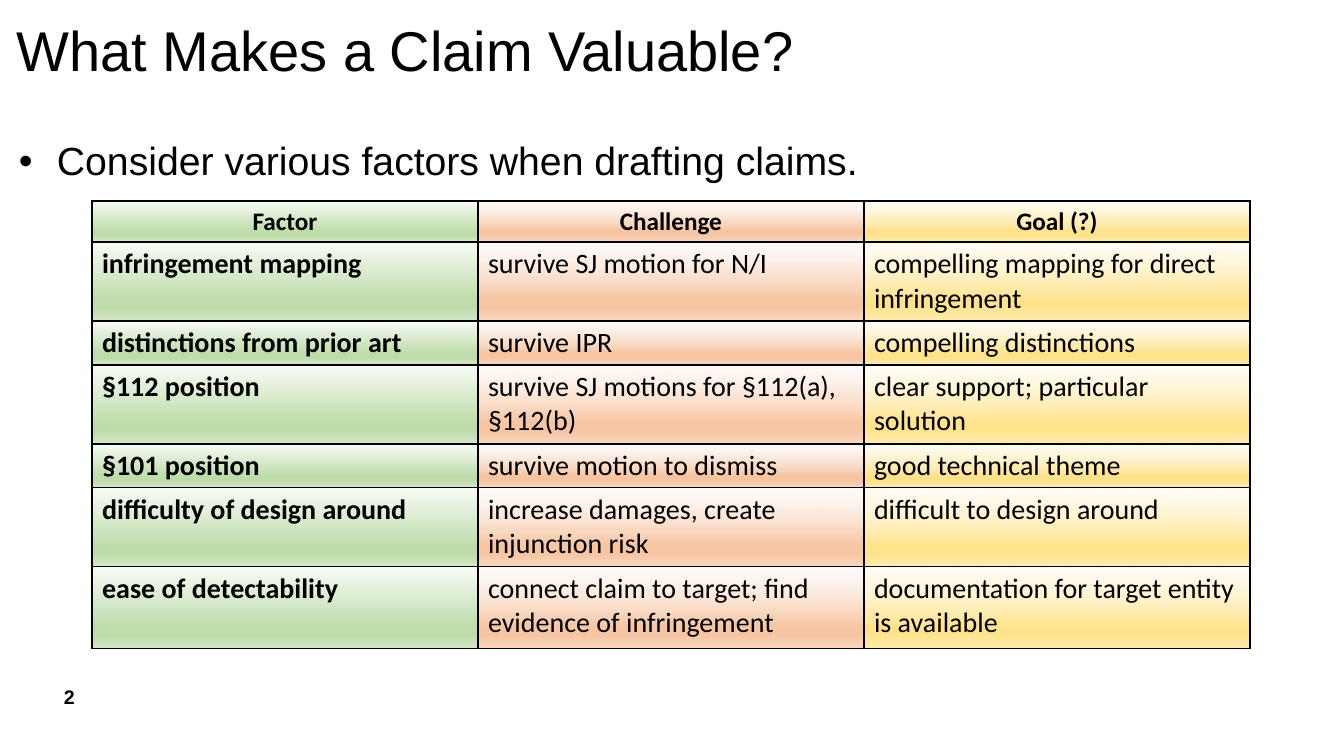
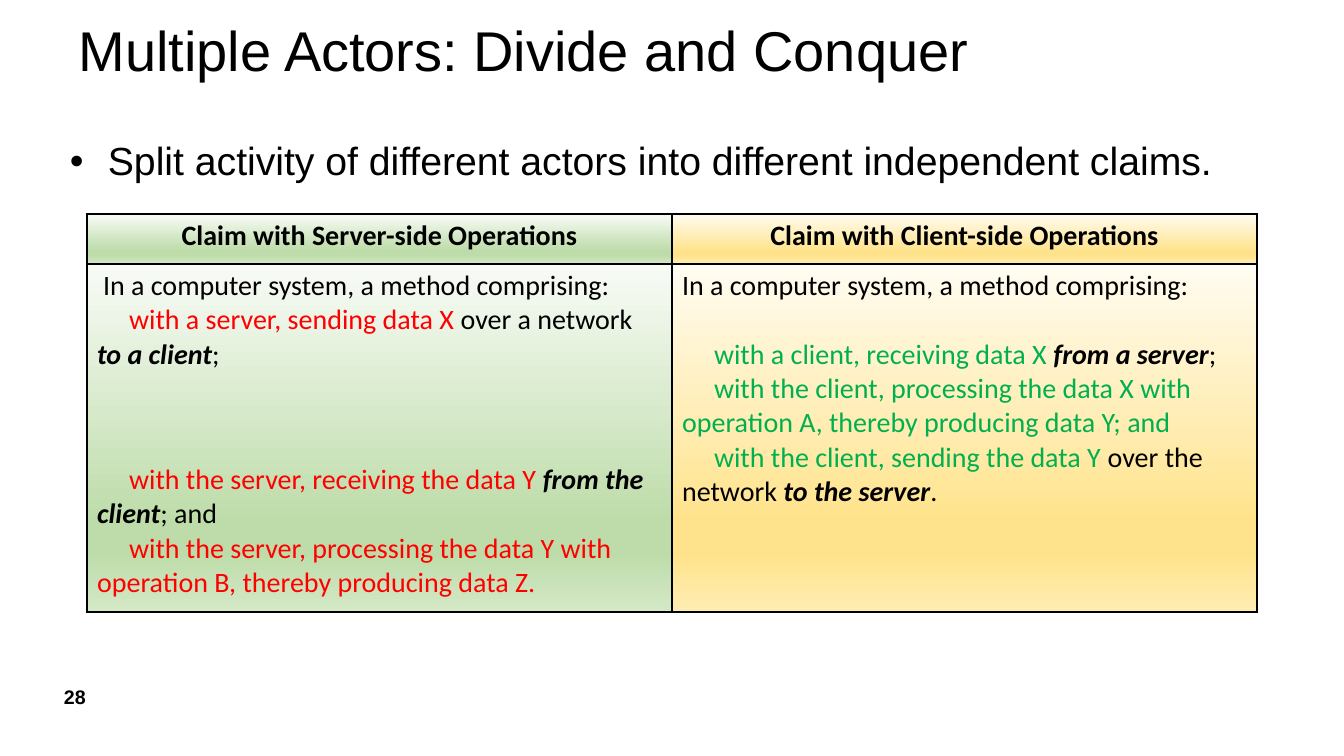
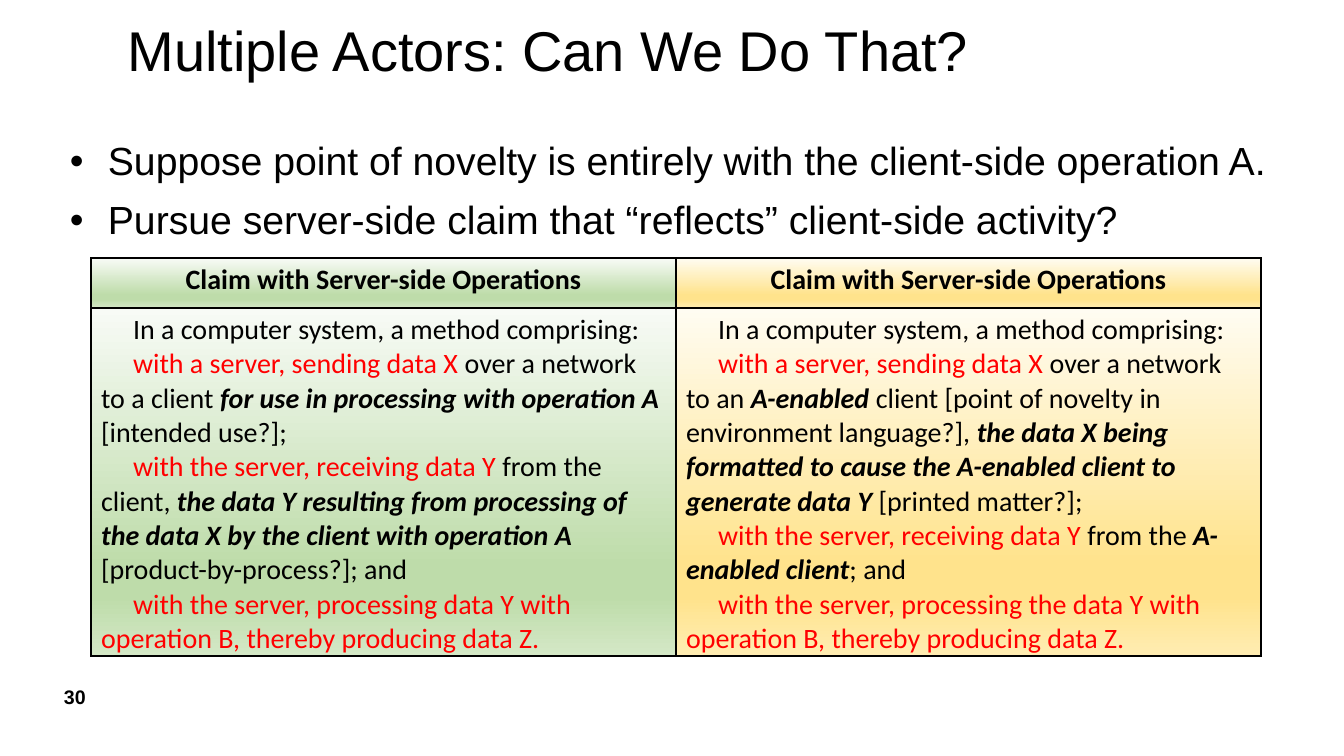
import pptx
import pptx.dml.color
import pptx.enum.text
import pptx.oxml.ns
import pptx.util
from lxml import etree

RGBColor = pptx.dml.color.RGBColor
ALIGN = pptx.enum.text.PP_ALIGN
ANCHOR = pptx.enum.text.MSO_ANCHOR
qn = pptx.oxml.ns.qn

PX_PER_INCH = 100.8
SLIDE_WIDTH, SLIDE_HEIGHT = 1344, 756
BLACK = RGBColor(0x00, 0x00, 0x00)
RED = RGBColor(0xFF, 0x00, 0x00)
GREEN = RGBColor(0x00, 0xB0, 0x50)
HEADING_FONT, TABLE_FONT = "Arial", "Calibri"

# Gradient colours at the stops below, and the opacity of the first stop
STOPS = (0, 74, 83, 100)
LEAF = ((RGBColor(0xF8, 0xFB, 0xF6), RGBColor(0xBE, 0xDC, 0xAA),
         RGBColor(0xBE, 0xDC, 0xAA), RGBColor(0xD4, 0xE8, 0xC6)), 100)
PEACH = ((RGBColor(0xFE, 0xF8, 0xF5), RGBColor(0xF7, 0xC5, 0xA2),
          RGBColor(0xF7, 0xC5, 0xA2), RGBColor(0xFA, 0xD8, 0xC1)), 43)
GOLD_COLOURS = (RGBColor(0xFF, 0xFC, 0xF2), RGBColor(0xFF, 0xE3, 0x8C),
                RGBColor(0xFF, 0xE3, 0x8C), RGBColor(0xFF, 0xEC, 0xB2))
GOLD, PALE_GOLD = (GOLD_COLOURS, 100), (GOLD_COLOURS, 52)

# Run styles
PLAIN = {}
STRONG = {"bold": True}
SERVER = {"color": RED}
CLIENT = {"color": GREEN}
POINT = {"bold": True, "italic": True}

STEP_INDENT = 32
LINE_GAP = 24.4  # points, height of one table line


def claim_line(*runs, indent=STEP_INDENT, before=0):
    return {"runs": runs, "indent": indent, "before": before}


FACTORS = [
    ("Factor", "Challenge", "Goal (?)"),
    ("infringement mapping", "survive SJ motion for N/I",
     "compelling mapping for direct infringement"),
    ("distinctions from prior art", "survive IPR", "compelling distinctions"),
    ("§112 position", "survive SJ motions for §112(a), §112(b)",
     "clear support; particular solution"),
    ("§101 position", "survive motion to dismiss", "good technical theme"),
    ("difficulty of design around", "increase damages, create injunction risk",
     "difficult to design around"),
    ("ease of detectability",
     "connect claim to target; find evidence of infringement",
     "documentation for target entity is available"),
]

PREAMBLE = ("In a computer system, a method comprising:", PLAIN)
SERVER_SENDS = ("with a server, sending data X", SERVER)

SPLIT_CLAIMS = [
    ("Claim with Server-side Operations", [
        claim_line(PREAMBLE, indent=6),
        claim_line(SERVER_SENDS, (" over a network ", PLAIN),
                   ("to a client", POINT), (";", PLAIN)),
        claim_line(("with the server, receiving the data Y ", SERVER),
                   ("from the client", POINT), ("; and", PLAIN), before=65),
        claim_line(("with the server, processing the data Y with operation B, "
                    "thereby producing data Z.", SERVER)),
    ]),
    ("Claim with Client-side Operations", [
        claim_line(PREAMBLE, indent=0),
        claim_line(("with a client, receiving data X ", CLIENT),
                   ("from a server", POINT), (";", PLAIN), before=LINE_GAP),
        claim_line(("with the client, processing the data X with operation A, "
                    "thereby producing data Y; and", CLIENT)),
        claim_line(("with the client, sending the data Y", CLIENT),
                   (" over the network ", PLAIN), ("to the server", POINT),
                   (".", PLAIN)),
    ]),
]

REFLECTING_CLAIMS = [
    ("Claim with Server-side Operations", [
        claim_line(PREAMBLE),
        claim_line(SERVER_SENDS, (" over a network to a client ", PLAIN),
                   ("for use in processing with operation A", POINT),
                   (" [intended use?];", PLAIN)),
        claim_line(("with the server, receiving data Y ", SERVER),
                   ("from the client, ", PLAIN),
                   ("the data Y resulting from processing of the data X "
                    "by the client with operation A ", POINT),
                   ("[product-by-process?]; and", PLAIN)),
        claim_line(("with the server, processing data Y with operation B, "
                    "thereby producing data Z.", SERVER)),
    ]),
    ("Claim with Server-side Operations", [
        claim_line(PREAMBLE),
        claim_line(SERVER_SENDS, (" over a network to an ", PLAIN),
                   ("A-enabled ", POINT),
                   ("client [point of novelty in environment language?], ", PLAIN),
                   ("the data X being formatted to cause the A-enabled client "
                    "to generate data Y", POINT),
                   (" [printed matter?];", PLAIN)),
        claim_line(("with the server, receiving data Y", SERVER),
                   (" from the ", PLAIN), ("A-enabled client", POINT),
                   ("; and", PLAIN)),
        claim_line(("with the server, processing the data Y with operation B, "
                    "thereby producing data Z.", SERVER)),
    ]),
]


def px(length):
    return pptx.util.Emu(round(length * 914400 / PX_PER_INCH))


def add_xml(parent, tag, **attributes):
    element = etree.SubElement(parent, qn(tag))
    for name, value in attributes.items():
        element.set(name, str(value))
    return element


def add_text(paragraph, text, font=TABLE_FONT, size=20, color=BLACK,
             bold=False, italic=False):
    run = paragraph.add_run()
    run.text = text
    run.font.name = font
    run.font.size = pptx.util.Pt(size)
    run.font.color.rgb = color
    run.font.bold = bold
    run.font.italic = italic


def next_paragraph(frame, index):
    return frame.paragraphs[0] if index == 0 else frame.add_paragraph()


def add_box(slide, left, top, width, height, anchor=ANCHOR.TOP):
    box = slide.shapes.add_textbox(px(left), px(top), px(width), px(height))
    box.text_frame.word_wrap = True
    box.text_frame.vertical_anchor = anchor
    return box.text_frame


def add_slide(presentation, number, title, title_width, bullets,
              bullets_width, bullet_indent, space_after=0):
    """Add a slide with its title, bullets and slide number."""
    slide = presentation.slides.add_slide(presentation.slide_layouts[6])

    paragraph = add_box(slide, 54, 677, 128, 40, ANCHOR.MIDDLE).paragraphs[0]
    paragraph.space_after = pptx.util.Pt(6)
    add_text(paragraph, number, font=HEADING_FONT, size=14, bold=True)

    paragraph = add_box(slide, -7, 0, title_width, 107, ANCHOR.MIDDLE).paragraphs[0]
    paragraph.alignment = ALIGN.RIGHT
    paragraph.line_spacing = 0.9
    add_text(paragraph, title, font=HEADING_FONT, size=40)

    frame = add_box(slide, 9, 137, bullets_width, 54 + 59 * (len(bullets) - 1))
    for index, text in enumerate(bullets):
        paragraph = next_paragraph(frame, index)
        properties = paragraph._p.get_or_add_pPr()
        properties.set("marL", str(px(bullet_indent)))
        properties.set("indent", str(px(-38)))
        add_xml(properties, "a:buFont", typeface=HEADING_FONT)
        add_xml(properties, "a:buChar", char="•")
        paragraph.line_spacing = 0.9
        paragraph.space_after = pptx.util.Pt(space_after)
        add_text(paragraph, text, font=HEADING_FONT, size=28)
    return slide


def style_cell(cell, gradient):
    """Give the cell thin black borders and a vertical gradient."""
    properties = cell._tc.get_or_add_tcPr()
    for side in ("a:lnL", "a:lnR", "a:lnT", "a:lnB"):
        line = add_xml(properties, side, w=pptx.util.Pt(1))
        add_xml(add_xml(line, "a:solidFill"), "a:srgbClr", val=BLACK)
    colours, first_opacity = gradient
    fill = add_xml(properties, "a:gradFill", rotWithShape=1)
    stops = add_xml(fill, "a:gsLst")
    for position, colour in zip(STOPS, colours):
        stop = add_xml(stops, "a:gs", pos=position * 1000)
        color = add_xml(stop, "a:srgbClr", val=colour)
        if position == 0 and first_opacity < 100:
            add_xml(color, "a:alpha", val=first_opacity * 1000)
    add_xml(fill, "a:lin", ang=90 * 60000, scaled=0)


def add_grid(slide, left, top, column_width, row_heights, gradients):
    """Add a table with one gradient per column."""
    table = slide.shapes.add_table(
        len(row_heights), len(gradients), px(left), px(top),
        px(column_width * len(gradients)), px(sum(row_heights))).table
    table.first_row = table.horz_banding = False
    for row, height in zip(table.rows, row_heights):
        row.height = px(height)
        for cell, gradient in zip(row.cells, gradients):
            style_cell(cell, gradient)
    for column in table.columns:
        column.width = px(column_width)
    return table


def add_header(cell, text, size):
    paragraph = cell.text_frame.paragraphs[0]
    paragraph.alignment = ALIGN.CENTER
    add_text(paragraph, text, size=size, bold=True)


def add_factor_table(slide):
    table = add_grid(slide, 92, 201, 386, (41, 79, 44, 79, 44, 79, 82),
                     (LEAF, PEACH, PALE_GOLD))
    for row_index, texts in enumerate(FACTORS):
        for column_index, text in enumerate(texts):
            cell = table.cell(row_index, column_index)
            if row_index == 0:
                add_header(cell, text, 18)
            else:
                style = STRONG if column_index == 0 else PLAIN
                add_text(cell.text_frame.paragraphs[0], text, **style)


def add_claim_table(slide, left, top, claims):
    table = add_grid(slide, left, top, 585, (50, 348), (LEAF, GOLD))
    for column_index, (header, lines) in enumerate(claims):
        add_header(table.cell(0, column_index), header, 20)
        cell = table.cell(1, column_index)
        cell.margin_bottom = 0
        for index, line in enumerate(lines):
            paragraph = next_paragraph(cell.text_frame, index)
            properties = paragraph._p.get_or_add_pPr()
            properties.set("marL", "0")
            properties.set("indent", str(px(line["indent"])))
            if line["before"]:
                paragraph.space_before = pptx.util.Pt(line["before"])
            for text, style in line["runs"]:
                add_text(paragraph, text, **style)


def main():
    presentation = pptx.Presentation()
    presentation.slide_width = px(SLIDE_WIDTH)
    presentation.slide_height = px(SLIDE_HEIGHT)

    slide = add_slide(presentation, "2", "What Makes a Claim Valuable?", 810,
                      ["Consider various factors when drafting claims."], 964, 38)
    add_factor_table(slide)

    slide = add_slide(
        presentation, "28", "Multiple Actors: Divide and Conquer", 985,
        ["Split activity of different actors into different independent claims."],
        1272, 89)
    add_claim_table(slide, 87, 214, SPLIT_CLAIMS)

    slide = add_slide(
        presentation, "30", "Multiple Actors: Can We Do That?", 985,
        ["Suppose point of novelty is entirely with the client-side operation A.",
         "Pursue server-side claim that “reflects” client-side activity?"],
        1272, 89, space_after=12)
    add_claim_table(slide, 91, 258, REFLECTING_CLAIMS)

    presentation.save("out.pptx")


if __name__ == "__main__":
    main()
